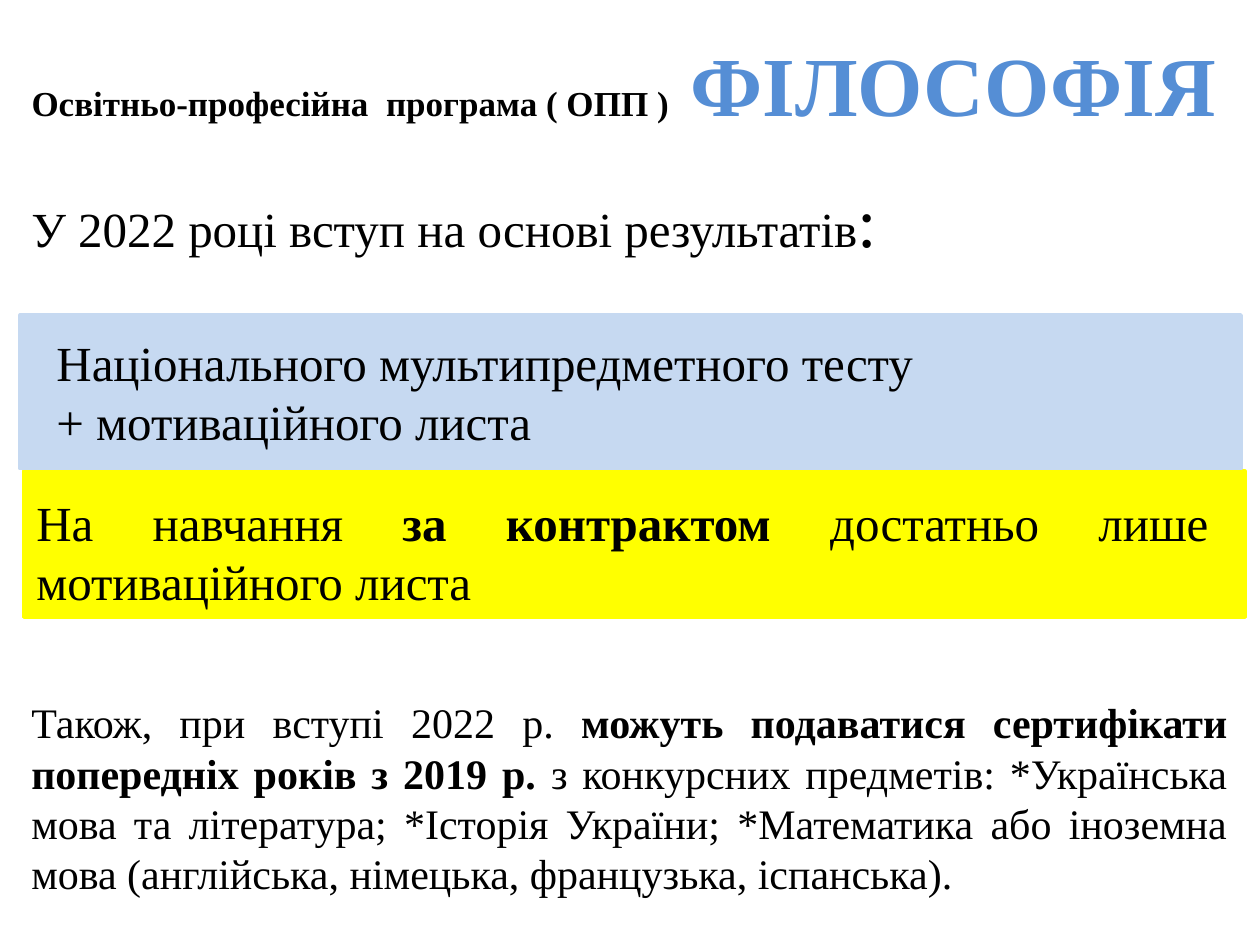
"""Build the admission slide for the Philosophy programme."""
from pptx import Presentation, util as u
from pptx.dml.color import RGBColor
from pptx.enum import shapes, text

FONT = "Times New Roman"
BLACK, BLUE, PALE_BLUE, YELLOW = "000000", "558ED5", "C6D9F1", "FFFF00"
LEFT, JUSTIFY = text.PP_ALIGN.LEFT, text.PP_ALIGN.JUSTIFY

TITLE = [[("Освітньо-професійна  програма ( ОПП )", 20, True, BLACK),
          (" ФІЛОСОФІЯ", 48, True, BLUE)]]
INTRO = [[("У 2022 році вступ на основі результатів", 28, False, BLACK),
          (":", 40, False, BLACK)]]
TEST = [[("Національного мультипредметного тесту", 28, False, BLACK)],
        [("+ мотиваційного листа", 28, False, BLACK)]]
CONTRACT = [[("На навчання ", 28, False, BLACK),
             ("за контрактом ", 28, True, BLACK),
             ("достатньо лише мотиваційного листа\u00a0".rstrip(), 28, False, BLACK)]]
CERTIFICATES = [[
    ("Також, при вступі 2022 р. ", 24, False, BLACK),
    ("можуть подаватися сертифікати попередніх років з 2019 р. ", 24, True, BLACK),
    ("з конкурсних предметів: *Українська мова та література; *Історія України; "
     "*Математика або іноземна мова (англійська, німецька, французька, іспанська).",
     24, False, BLACK)]]

BANDS = [((0.19, 3.74, 9.69, 1.16), YELLOW), ((0.16, 2.5, 9.69, 1.22), PALE_BLUE)]
TEXT_BOXES = [
    ((0.15, 1.36, 7.12, 0.77), INTRO, LEFT, False),
    ((0.35, 2.59, 7.13, 1.04), TEST, LEFT, False),
    ((0.19, 3.86, 9.5, 1.04), CONTRACT, JUSTIFY, True),
    ((0.15, 5.48, 9.69, 1.72), CERTIFICATES, JUSTIFY, True),
]


def color(value):
    return RGBColor.from_string(value)


def inches(box):
    return [u.Inches(length) for length in box]


def write(shape, paragraphs, alignment, wrap=True):
    frame = shape.text_frame
    frame.word_wrap = wrap
    frame.auto_size = text.MSO_AUTO_SIZE.NONE
    frame.vertical_anchor = text.MSO_ANCHOR.TOP
    for index, runs in enumerate(paragraphs):
        paragraph = frame.add_paragraph() if index else frame.paragraphs[0]
        paragraph.alignment = alignment
        for content, size, bold, hue in runs:
            run = paragraph.add_run()
            run.text = content
            run.font.name, run.font.size, run.font.bold = FONT, u.Pt(size), bold
            run.font.color.rgb = color(hue)


def add_band(slide, box, hue):
    band = slide.shapes.add_shape(shapes.MSO_SHAPE.RECTANGLE, *inches(box))
    band.shadow.inherit = False
    band.fill.solid()
    band.fill.fore_color.rgb = color(hue)
    band.line.color.rgb = color(hue)
    band.line.width = u.Pt(2)


def main():
    presentation = Presentation()
    presentation.slide_width, presentation.slide_height = inches((10, 7.5))
    slide = presentation.slides.add_slide(presentation.slide_layouts[5])
    title = slide.shapes.title
    title.left, title.top, title.width, title.height = inches((0.15, 0.21, 9.85, 0.91))
    write(title, TITLE, LEFT)
    for box, hue in BANDS:
        add_band(slide, box, hue)
    for box, paragraphs, alignment, wrap in TEXT_BOXES:
        write(slide.shapes.add_textbox(*inches(box)), paragraphs, alignment, wrap)
    presentation.save("out.pptx")


if __name__ == "__main__":
    main()
